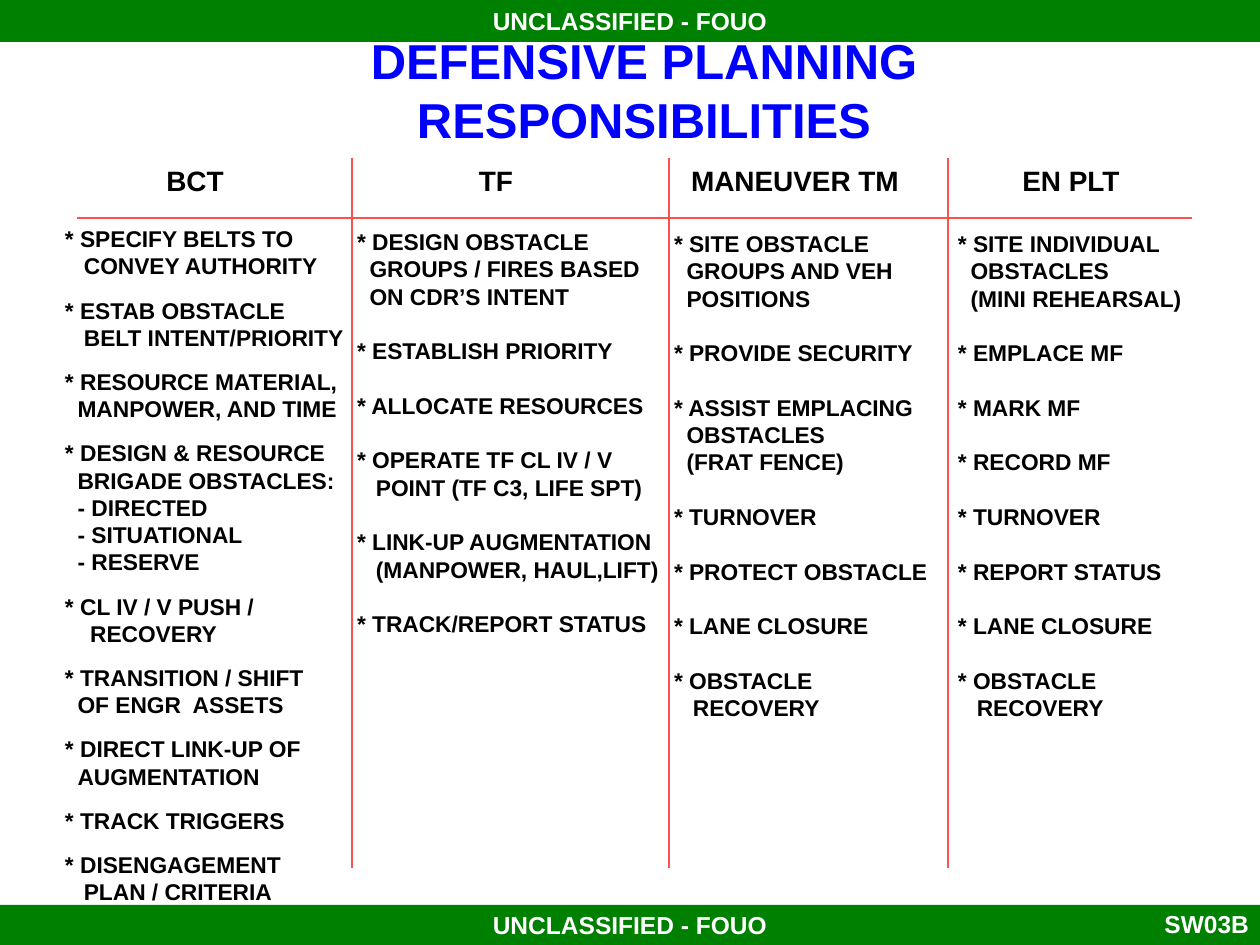
from lxml import etree
from pptx import Presentation
from pptx.dml.color import RGBColor
from pptx.enum.shapes import MSO_CONNECTOR, MSO_SHAPE
from pptx.enum.text import MSO_ANCHOR, PP_ALIGN
from pptx.oxml.ns import qn
from pptx.util import Pt

EMU_PER_PX = 914400 // 126
FONT = "Arial"
GREEN, BLUE, RED, BLACK, WHITE = "008000", "0000FF", "FF5050", "000000", "FFFFFF"
LEFT, CENTER, RIGHT = PP_ALIGN.LEFT, PP_ALIGN.CENTER, PP_ALIGN.RIGHT
TOP, MIDDLE = MSO_ANCHOR.TOP, MSO_ANCHOR.MIDDLE
RECTANGLE, STRAIGHT = MSO_SHAPE.RECTANGLE, MSO_CONNECTOR.STRAIGHT

BODY_SIZE = 13
LEADING = 1.2
INDENT_STEP = 3.6  # points
HEADING_WIDTH = 260
MARKING = "UNCLASSIFIED - FOUO"

# Each duty: indent steps of its continuation lines, then its lines
BCT = [
    (3, "* SPECIFY BELTS TO", "CONVEY AUTHORITY"),
    (3, "* ESTAB OBSTACLE", "BELT INTENT/PRIORITY"),
    (2, "* RESOURCE MATERIAL,", "MANPOWER, AND TIME"),
    (2, "* DESIGN & RESOURCE", "BRIGADE OBSTACLES:",
     "- DIRECTED", "- SITUATIONAL", "- RESERVE"),
    (4, "* CL IV / V PUSH /", "RECOVERY"),
    (2, "* TRANSITION / SHIFT", "OF ENGR  ASSETS"),
    (2, "* DIRECT LINK-UP OF", "AUGMENTATION"),
    (0, "* TRACK TRIGGERS"),
    (3, "* DISENGAGEMENT", "PLAN / CRITERIA"),
]
TF = [
    (2, "* DESIGN OBSTACLE", "GROUPS / FIRES BASED", "ON CDR’S INTENT"),
    (0, "* ESTABLISH PRIORITY"),
    (0, "* ALLOCATE RESOURCES"),
    (3, "* OPERATE TF CL IV / V", "POINT (TF C3, LIFE SPT)"),
    (3, "* LINK-UP AUGMENTATION", "(MANPOWER, HAUL,LIFT)"),
    (0, "* TRACK/REPORT STATUS"),
]
MANEUVER_TM = [
    (2, "* SITE OBSTACLE", "GROUPS AND VEH", "POSITIONS"),
    (0, "* PROVIDE SECURITY"),
    (2, "* ASSIST EMPLACING", "OBSTACLES", "(FRAT FENCE)"),
    (0, "* TURNOVER"),
    (0, "* PROTECT OBSTACLE"),
    (0, "* LANE CLOSURE"),
    (3, "* OBSTACLE", "RECOVERY"),
]
EN_PLT = [
    (2, "* SITE INDIVIDUAL", "OBSTACLES", "(MINI REHEARSAL)"),
    (0, "* EMPLACE MF"),
    (0, "* MARK MF"),
    (0, "* RECORD MF"),
    (0, "* TURNOVER"),
    (0, "* REPORT STATUS"),
    (0, "* LANE CLOSURE"),
    (3, "* OBSTACLE", "RECOVERY"),
]
# heading, heading centre, list left, top, width, height, gap size, duties
COLUMNS = [
    ("BCT", 195, 65, 225, 286, 682, 8, BCT),
    ("TF", 496, 357, 228, 312, 412, BODY_SIZE, TF),
    ("MANEUVER TM", 795, 674, 230, 272, 494, BODY_SIZE, MANEUVER_TM),
    ("EN PLT", 1071, 958, 230, 240, 494, BODY_SIZE, EN_PLT),
]


def px(length):
    return length * EMU_PER_PX


def rgb(color):
    return RGBColor.from_string(color)


def prepare_frame(shape, anchor):
    frame = shape.text_frame
    frame.word_wrap = True
    frame.vertical_anchor = anchor
    frame.margin_left = frame.margin_right = 0
    frame.margin_top = frame.margin_bottom = 0
    return frame


def add_run(paragraph, text, size, color):
    run = paragraph.add_run()
    run.text = text
    font = run.font
    font.name, font.size, font.bold = FONT, Pt(size), True
    font.color.rgb = rgb(color)


def add_label(slide, box, lines, size, color, align=CENTER):
    """Add vertically centred text, one line break between lines."""
    frame = prepare_frame(slide.shapes.add_textbox(*map(px, box)), MIDDLE)
    paragraph = frame.paragraphs[0]
    paragraph.alignment = align
    paragraph.line_spacing = Pt(size * LEADING)
    for number, line in enumerate(lines):
        if number:
            paragraph.add_line_break()
        add_run(paragraph, line, size, color)


def add_marking_bar(slide, top, height):
    bar = slide.shapes.add_shape(RECTANGLE, 0, px(top), px(1260), px(height))
    bar.shadow.inherit = False
    bar.fill.solid()
    bar.fill.fore_color.rgb = rgb(GREEN)
    bar.line.fill.background()
    paragraph = prepare_frame(bar, MIDDLE).paragraphs[0]
    paragraph.alignment = CENTER
    add_run(paragraph, MARKING, 14, WHITE)


def add_rule(slide, *ends):
    rule = slide.shapes.add_connector(STRAIGHT, *map(px, ends))
    rule.line.color.rgb = rgb(RED)
    rule.line.width = Pt(1)
    etree.SubElement(rule._element.spPr, qn("a:effectLst"))


def add_duties(slide, box, gap_size, duties):
    frame = prepare_frame(slide.shapes.add_textbox(*map(px, box)), TOP)
    paragraph = frame.paragraphs[0]
    for number, (indent, *lines) in enumerate(duties):
        for position, line in enumerate(lines):
            if number or position:
                paragraph = frame.add_paragraph()
            paragraph.alignment = LEFT
            paragraph.line_spacing = Pt(BODY_SIZE * LEADING)
            if position:
                margin = Pt(indent * INDENT_STEP)
                paragraph._p.get_or_add_pPr().set("marL", str(margin))
            elif number:
                paragraph.space_before = Pt(gap_size * LEADING)
            add_run(paragraph, line, BODY_SIZE, BLACK)


def main():
    presentation = Presentation()
    presentation.slide_width, presentation.slide_height = px(1260), px(945)
    slide = presentation.slides.add_slide(presentation.slide_layouts[6])

    add_marking_bar(slide, 905, 40)
    add_marking_bar(slide, 0, 42)
    add_label(slide, (1140, 903, 109, 42), ["SW03B"], 14, WHITE, RIGHT)
    add_label(slide, (224, 10, 840, 158),
              ["DEFENSIVE PLANNING", "RESPONSIBILITIES"], 28, BLUE)

    for heading, center, left, top, width, height, gap_size, duties in COLUMNS:
        heading_box = (center - HEADING_WIDTH // 2, 157, HEADING_WIDTH, 46)
        add_label(slide, heading_box, [heading], 16, BLACK)
        add_duties(slide, (left, top, width, height), gap_size, duties)

    add_rule(slide, 77, 218, 1192, 218)
    for divider in (352, 669, 948):
        add_rule(slide, divider, 158, divider, 868)

    presentation.save("out.pptx")


if __name__ == "__main__":
    main()
